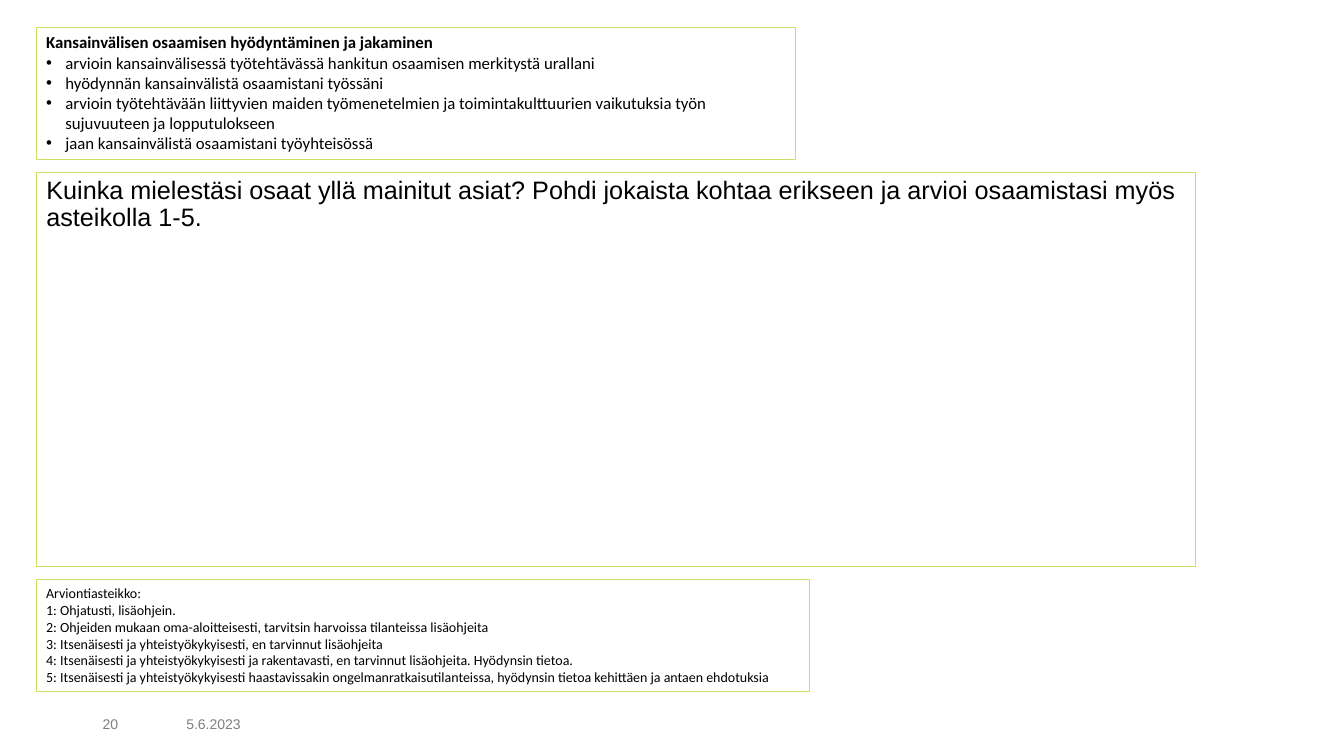
from dataclasses import dataclass

from lxml.etree import SubElement
from pptx import Presentation
from pptx.dml.color import RGBColor
from pptx.enum.text import MSO_ANCHOR, MSO_AUTO_SIZE, PP_ALIGN
from pptx.oxml.ns import qn
from pptx.util import Inches, Pt


@dataclass(frozen=True)
class Theme:
    border: RGBColor = RGBColor(0xD0, 0xDD, 0x63)
    text: RGBColor = RGBColor(0, 0, 0)
    muted: RGBColor = RGBColor(0x80, 0x80, 0x80)
    main_font: str = "Arial"
    box_font: str = "Calibri"
    question: int = 18
    goals: int = 12
    small: int = 10


SKILLS_TITLE = "Kansainvälisen osaamisen hyödyntäminen ja jakaminen"
SKILLS = [
    "arvioin kansainvälisessä työtehtävässä hankitun osaamisen merkitystä urallani",
    "hyödynnän kansainvälistä osaamistani työssäni",
    "arvioin työtehtävään liittyvien maiden työmenetelmien ja toimintakulttuurien "
    "vaikutuksia työn sujuvuuteen ja lopputulokseen",
    "jaan kansainvälistä osaamistani työyhteisössä",
]
QUESTION = (
    "Kuinka mielestäsi osaat yllä mainitut asiat? Pohdi jokaista kohtaa erikseen "
    "ja arvioi osaamistasi myös asteikolla 1-5."
)
SCALE_TITLE = "Arviontiasteikko:"
SCALE = [
    "Ohjatusti, lisäohjein.",
    "Ohjeiden mukaan oma-aloitteisesti, tarvitsin harvoissa tilanteissa lisäohjeita",
    "Itsenäisesti ja yhteistyökykyisesti, en tarvinnut lisäohjeita",
    "Itsenäisesti ja yhteistyökykyisesti ja rakentavasti, en tarvinnut lisäohjeita. "
    "Hyödynsin tietoa.",
    "Itsenäisesti ja yhteistyökykyisesti haastavissakin ongelmanratkaisutilanteissa, "
    "hyödynsin tietoa kehittäen ja antaen ehdotuksia",
]


class SlideBuilder:
    def __init__(self, slide, theme):
        self.slide = slide
        self.theme = theme

    def outline(self, sp):
        sp.line.color.rgb = self.theme.border
        sp.line.width = Pt(0.75)

    def fill_text(self, tf, lines, font, size, color):
        tf.word_wrap = True
        tf.text = "\n".join(lines)
        for p in tf.paragraphs:
            for r in p.runs:
                r.font.name = font
                r.font.size = Pt(size)
                r.font.color.rgb = color

    def set_bullet(self, p, char=None, indent=0.0):
        pPr = p._p.get_or_add_pPr()
        pPr.set("marL", str(Inches(indent)))
        pPr.set("indent", str(-Inches(indent)))
        if char:
            SubElement(pPr, qn("a:buFont"), typeface=self.theme.main_font)
            SubElement(pPr, qn("a:buChar"), char=char)
        else:
            SubElement(pPr, qn("a:buNone"))

    def body(self, text, left, top, width, height):
        sp = self.slide.placeholders[1]
        sp.left, sp.top = Inches(left), Inches(top)
        sp.width, sp.height = Inches(width), Inches(height)
        self.outline(sp)
        tf = sp.text_frame
        t = self.theme
        self.fill_text(tf, [text], t.main_font, t.question, t.text)
        tf.auto_size = MSO_AUTO_SIZE.NONE
        tf.vertical_anchor = MSO_ANCHOR.TOP
        p = tf.paragraphs[0]
        self.set_bullet(p)
        p.alignment = PP_ALIGN.LEFT
        p.line_spacing = 0.9
        p.space_before = Pt(0)

    def text_box(self, left, top, width, height):
        return self.slide.shapes.add_textbox(
            Inches(left), Inches(top), Inches(width), Inches(height))

    def framed_box(self, lines, size, left, top, width, height):
        sp = self.text_box(left, top, width, height)
        self.outline(sp)
        tf = sp.text_frame
        self.fill_text(tf, lines, self.theme.box_font, size, self.theme.text)
        tf.auto_size = MSO_AUTO_SIZE.SHAPE_TO_FIT_TEXT
        return tf

    def skills_box(self, title, skills, left, top, width, height):
        tf = self.framed_box([title, *skills], self.theme.goals, left, top, width, height)
        heading, *items = tf.paragraphs
        heading.runs[0].font.bold = True
        for p in items:
            self.set_bullet(p, "•", 0.19)

    def footer(self, text, left, width):
        tf = self.text_box(left, 6.73, width, 0.58).text_frame
        t = self.theme
        self.fill_text(tf, [text], t.main_font, t.small, t.muted)
        tf.vertical_anchor = MSO_ANCHOR.BOTTOM


def main():
    prs = Presentation()
    prs.slide_width, prs.slide_height = Inches(13.33), Inches(7.5)
    s = prs.slides.add_slide(prs.slide_layouts[1])
    title = s.shapes.title._element
    title.getparent().remove(title)

    theme = Theme()
    builder = SlideBuilder(s, theme)
    left = 0.36
    builder.body(QUESTION, left, 1.71, 11.5, 3.91)
    builder.footer("5.6.2023", 1.75, 1.6)
    builder.footer("20", 0.92, 0.69)
    scale = [f"{grade}: {text}" for grade, text in enumerate(SCALE, 1)]
    builder.framed_box([SCALE_TITLE, *scale], theme.small, left, 5.75, 7.67, 1.11)
    builder.skills_box(SKILLS_TITLE, SKILLS, left, 0.27, 7.53, 1.31)
    prs.save("out.pptx")


if __name__ == "__main__":
    main()
